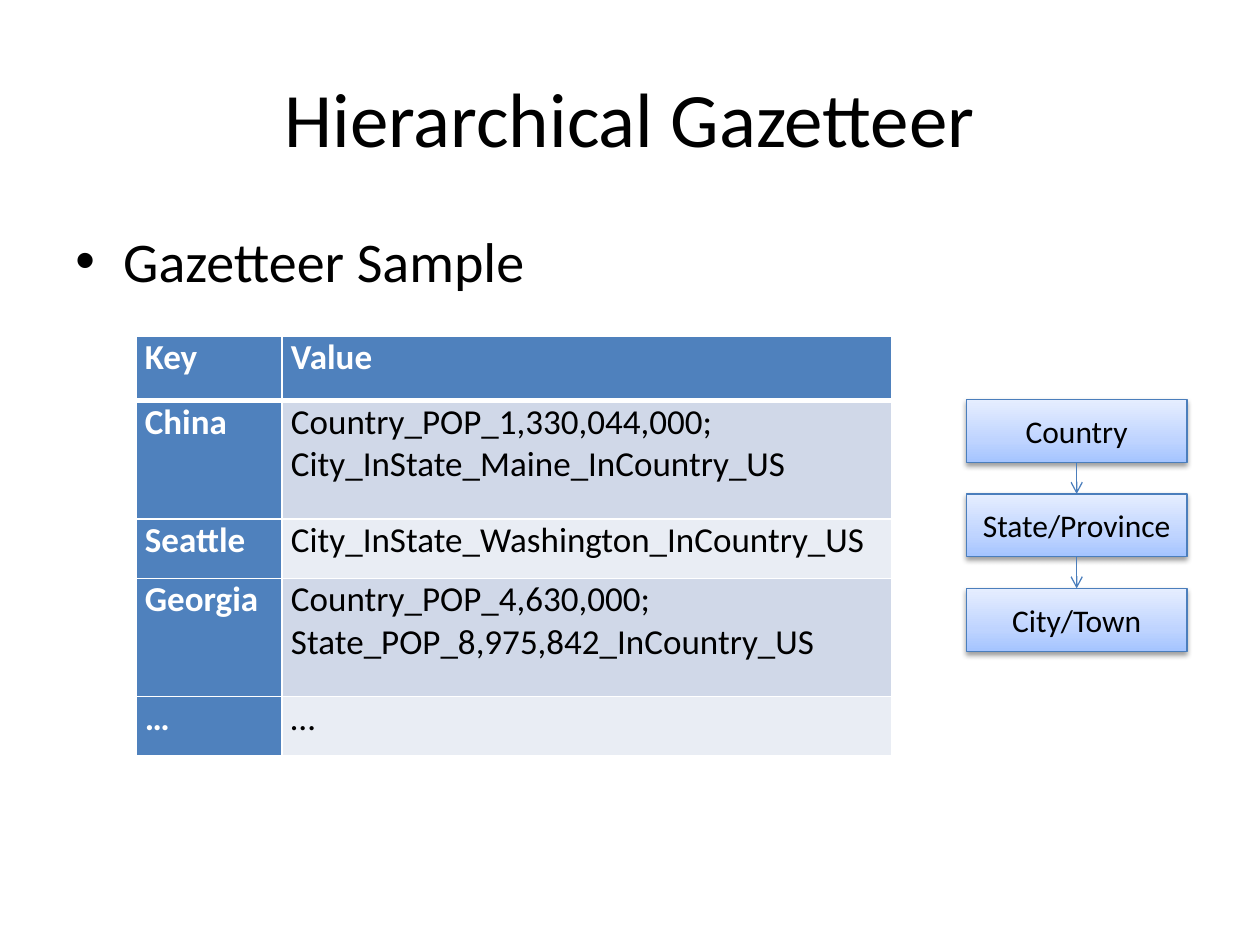
from copy import deepcopy

from lxml import etree
from pptx import Presentation
from pptx import util as u
from pptx.dml.color import RGBColor
from pptx.enum import shapes, text
from pptx.oxml.ns import qn

COLORS = {
    "black": "000000", "white": "FFFFFF", "key": "4F81BD", "odd": "D0D8E8",
    "even": "E9EDF4", "line": "4B7EBC",
}
LEVEL_GRADIENT = [(0, "A4C4FF"), (0.35, "BFD4FF"), (1, "E6EEFF")]
GAZETTEER = [
    ("Key", ["Value"]),
    ("China", ["Country_POP_1,330,044,000;", "City_InState_Maine_InCountry_US"]),
    ("Seattle", ["City_InState_Washington_InCountry_US"]),
    ("Georgia", ["Country_POP_4,630,000;", "State_POP_8,975,842_InCountry_US"]),
    ("…", ["…"]),
]
COLUMN_WIDTHS = [1.16, 4.84]
ROW_HEIGHTS = [0.51, 0.94, 0.47, 0.94, 0.47]
LEVELS = ["Country", "State/Province", "City/Town"]


def rgb(name):
    return RGBColor.from_string(COLORS[name])


def add_child(parent, tag, **attributes):
    child = etree.SubElement(parent, qn(tag))
    for name, value in attributes.items():
        child.set(name, str(value))
    return child


class SlideBuilder:
    """Draws styled elements on the current page."""

    font = "Calibri"

    def __init__(self, page):
        self.page = page

    def fill_text(self, frame, lines, size, align, color="black", bold=False):
        frame.word_wrap = True
        for index, line in enumerate(lines):
            para = frame.add_paragraph() if index else frame.paragraphs[0]
            para.text = line
            para.alignment = align
            para.font.name = self.font
            para.font.size = u.Pt(size)
            para.font.bold = bold
            para.font.color.rgb = rgb(color)

    def textbox(self, line, place, size, align, anchor):
        box = self.page.shapes.add_textbox(*map(u.Inches, place))
        self.fill_text(box.text_frame, [line], size, align)
        box.text_frame.vertical_anchor = anchor
        return box

    def bullet(self, line, place, size):
        box = self.textbox(line, place, size, text.PP_ALIGN.LEFT, text.MSO_ANCHOR.TOP)
        para = box.text_frame.paragraphs[0]
        para.space_before = u.Pt(size * 0.2)
        properties = para._p.get_or_add_pPr()
        indent = u.Inches(0.38)
        properties.set("marL", str(indent))
        properties.set("indent", str(-indent))
        mark = etree.Element(qn("a:buChar"), char="•")
        properties.find(qn("a:spcBef")).addnext(mark)
        mark.addprevious(etree.Element(qn("a:buFont"), typeface="Arial"))

    def level(self, label, place):
        box = self.page.shapes.add_shape(
            shapes.MSO_SHAPE.RECTANGLE, *map(u.Inches, place))
        box.fill.gradient()
        box.fill.gradient_angle = 90
        stops = box._element.spPr.find(".//" + qn("a:gsLst"))
        stops.append(deepcopy(stops[-1]))
        for stop, (position, color) in zip(box.fill.gradient_stops, LEVEL_GRADIENT):
            stop.position = position
            stop.color.rgb = RGBColor.from_string(color)
        box.line.color.rgb = rgb("line")
        box.line.width = u.Pt(0.75)
        box.shadow.inherit = False
        effects = box._element.spPr.find(qn("a:effectLst"))
        shadow = add_child(effects, "a:outerShdw", blurRad=u.Pt(3.1), dist=u.Pt(1.6),
                           dir=5400000, rotWithShape=0)
        shade = add_child(shadow, "a:srgbClr", val=COLORS["black"])
        add_child(shade, "a:alpha", val=38000)
        self.fill_text(box.text_frame, [label], 18, text.PP_ALIGN.CENTER)
        box.text_frame.vertical_anchor = text.MSO_ANCHOR.MIDDLE
        return box

    def arrow(self, upper, lower):
        link = self.page.shapes.add_connector(shapes.MSO_CONNECTOR.STRAIGHT, 0, 0, 0, 0)
        link.begin_connect(upper, 2)
        link.end_connect(lower, 0)
        link.line.color.rgb = rgb("line")
        link.line.width = u.Pt(0.75)
        properties = link._element.spPr
        add_child(properties.find(qn("a:ln")), "a:tailEnd", type="arrow")
        add_child(properties, "a:effectLst")

    def borders(self, cell, **widths):
        properties = cell._tc.get_or_add_tcPr()
        for side in "LRTB":
            line = add_child(properties, "a:ln" + side, w=u.Pt(widths.get(side, 1)))
            fill = add_child(line, "a:solidFill")
            add_child(fill, "a:srgbClr", val=COLORS["white"])

    def cell(self, cell, lines, fill, strong, **widths):
        self.borders(cell, **widths)
        cell.fill.solid()
        cell.fill.fore_color.rgb = rgb(fill)
        cell.margin_left = cell.margin_right = u.Inches(0.07)
        cell.margin_top = cell.margin_bottom = 0
        self.fill_text(cell.text_frame, lines, 20, text.PP_ALIGN.JUSTIFY,
                       "white" if strong else "black", strong)

    def table(self, rows, left, top):
        place = (left, top, sum(COLUMN_WIDTHS), sum(ROW_HEIGHTS))
        grid = self.page.shapes.add_table(
            len(rows), len(COLUMN_WIDTHS), *map(u.Inches, place)).table
        for column, width in zip(grid.columns, COLUMN_WIDTHS):
            column.width = u.Inches(width)
        for index, (key, values) in enumerate(rows):
            grid.rows[index].height = u.Inches(ROW_HEIGHTS[index])
            header = index == 0
            widths = {0: {"B": 3}, 1: {"T": 3}}.get(index, {})
            band = "key" if header else "odd" if index % 2 else "even"
            self.cell(grid.cell(index, 0), [key], "key", True, **widths)
            self.cell(grid.cell(index, 1), values, band, header, **widths)


def main():
    deck = Presentation()
    deck.slide_width, deck.slide_height = u.Inches(10), u.Inches(7.5)
    builder = SlideBuilder(deck.slides.add_slide(deck.slide_layouts[6]))
    builder.textbox("Hierarchical Gazetteer", (0.5, 0.3, 9, 1.25), 44,
                    text.PP_ALIGN.CENTER, text.MSO_ANCHOR.MIDDLE)
    boxes = [builder.level(label, (7.67, 3.17 + 0.75 * index, 1.75, 0.5))
             for index, label in enumerate(LEVELS)]
    for upper, lower in zip(boxes, boxes[1:]):
        builder.arrow(upper, lower)
    builder.bullet("Gazetteer Sample", (0.5, 1.75, 9, 4.95), 32)
    builder.table(GAZETTEER, 1.08, 2.67)
    deck.save("out.pptx")


if __name__ == "__main__":
    main()
